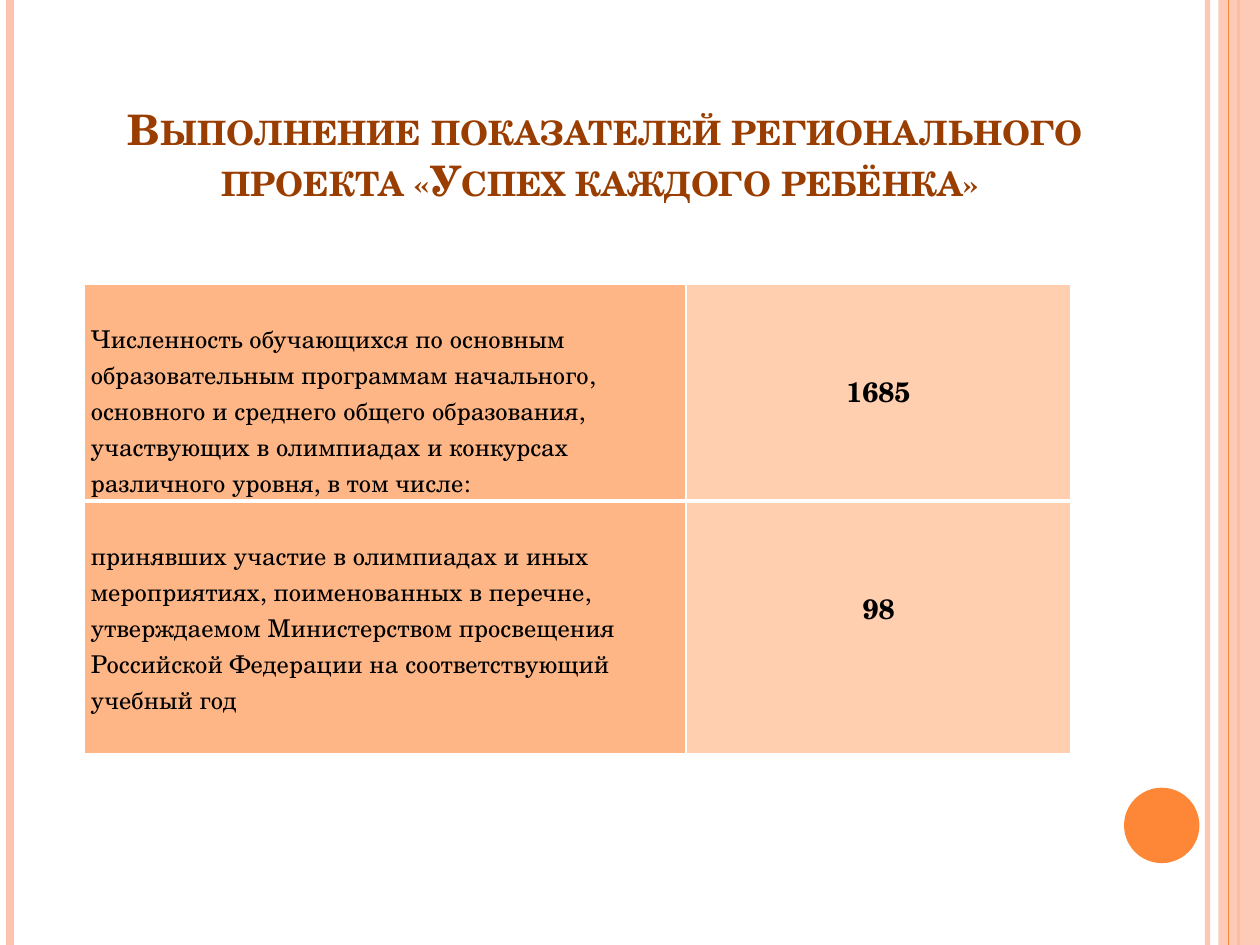
from lxml import etree
from pptx import Presentation
from pptx import util as u
from pptx.dml import color
from pptx.enum import shapes, text
from pptx.oxml import ns

WIDTH, HEIGHT = 25.4, 19.05
PEACH, ORANGE, WHITE = "FEC3AE", "FE8637", "FFFFFF"


def rgb(value):
    return color.RGBColor.from_string(value)


def add_xml(parent, tag, **attrs):
    return etree.SubElement(parent, ns.qn(tag), **attrs)


def set_alpha(fill_parent, percent):
    """Make the solid colour below fill_parent partly transparent."""
    clr = next(fill_parent.iter(ns.qn("a:srgbClr")))
    add_xml(clr, "a:alpha", val=str(percent * 1000))


class SlideBuilder:
    font = "TeX Gyre Schola"

    def __init__(self, slide):
        self.s = slide

    def vertical_line(self, x, hex_color, width, alpha=100):
        line = self.s.shapes.add_connector(
            shapes.MSO_CONNECTOR.STRAIGHT, u.Cm(x), 0, u.Cm(x), u.Cm(HEIGHT))
        line.line.color.rgb = rgb(hex_color)
        line.line.width = u.Pt(width)
        sp_pr = line._element.spPr
        if alpha < 100:
            set_alpha(sp_pr, alpha)
        add_xml(sp_pr, "a:effectLst")

    def shape(self, kind, x, y, w, h, hex_color, alpha=100):
        sp = self.s.shapes.add_shape(kind, u.Cm(x), u.Cm(y), u.Cm(w), u.Cm(h))
        sp.shadow.inherit = False
        sp.fill.solid()
        sp.fill.fore_color.rgb = rgb(hex_color)
        sp.line.fill.background()
        if alpha < 100:
            set_alpha(sp._element.spPr, alpha)

    def run(self, p, words, size, hex_color, bold=False):
        r = p.add_run()
        r.text = words
        r.font.name = self.font
        r.font.size = u.Pt(size)
        r.font.bold = bold
        r.font.color.rgb = rgb(hex_color)
        return r

    def title(self, words, x, y, w, h):
        sp = self.s.shapes.add_textbox(u.Cm(x), u.Cm(y), u.Cm(w), u.Cm(h))
        tf = sp.text_frame
        tf.word_wrap = True
        tf.vertical_anchor = text.MSO_ANCHOR.BOTTOM
        p = tf.paragraphs[0]
        p.alignment = text.PP_ALIGN.CENTER
        r = self.run(p, words, 24, "9A3D01", bold=True)
        r.font._element.set("cap", "small")

    def cell(self, cell, words, fill, size, top, align, bold, bottom_border):
        cell.margin_left = cell.margin_right = u.Cm(0.13)
        cell.margin_top, cell.margin_bottom = u.Cm(top), 0
        p = cell.text_frame.paragraphs[0]
        p.alignment = align
        self.run(p, words, size, "000000", bold)
        tc_pr = cell._tc.get_or_add_tcPr()
        widths = {"a:lnL": 1, "a:lnR": 1, "a:lnT": 1, "a:lnB": bottom_border}
        for tag, width in widths.items():
            ln = add_xml(tc_pr, tag, w=str(u.Pt(width)))
            add_xml(add_xml(ln, "a:solidFill"), "a:srgbClr", val=WHITE)
        cell.fill.solid()
        cell.fill.fore_color.rgb = rgb(fill)

    def table(self, rows, x, y, col_widths, row_heights):
        frame = self.s.shapes.add_table(
            len(rows), len(col_widths), u.Cm(x), u.Cm(y),
            u.Cm(sum(col_widths)), u.Cm(sum(row_heights)))
        table = frame.table
        table.first_row = table.horz_banding = False
        for column, width in zip(table.columns, col_widths):
            column.width = u.Cm(width)
        for i, (indicator, value) in enumerate(rows):
            table.rows[i].height = u.Cm(row_heights[i])
            border = 3 if i == 0 else 1
            self.cell(table.cell(i, 0), indicator, "FEB687", 14, 0.73,
                      text.PP_ALIGN.LEFT, False, border)
            self.cell(table.cell(i, 1), value, "FFCFAF", 16, 1.72,
                      text.PP_ALIGN.CENTER, True, border)


def main():
    prs = Presentation()
    prs.slide_width, prs.slide_height = u.Cm(WIDTH), u.Cm(HEIGHT)
    b = SlideBuilder(prs.slides.add_slide(prs.slide_layouts[6]))

    b.vertical_line(24.34, PEACH, 3, alpha=93)
    b.vertical_line(0.21, PEACH, 4.5)
    b.vertical_line(24.97, ORANGE, 1.5)
    b.shape(shapes.MSO_SHAPE.RECTANGLE, 24.56, 0, 0.84, HEIGHT, PEACH, alpha=87)
    b.vertical_line(24.77, ORANGE, 0.75)
    b.shape(shapes.MSO_SHAPE.OVAL, 22.66, 15.88, 1.52, 1.52, ORANGE)

    b.title("Выполнение показателей регионального проекта "
            "«Успех каждого ребёнка» ", 0.7, 1.33, 23.01, 2.92)
    b.table([
        ("Численность обучающихся по основным образовательным программам "
         "начального, основного и среднего общего образования, участвующих в "
         "олимпиадах и конкурсах различного уровня, в том числе:", "1685"),
        ("принявших участие в олимпиадах и иных мероприятиях, поименованных в "
         "перечне, утверждаемом Министерством просвещения Российской Федерации "
         "на соответствующий учебный год", "98"),
    ], 1.7, 5.73, [12.13, 7.76], [4.37, 5.09])
    prs.save("out.pptx")


if __name__ == "__main__":
    main()
